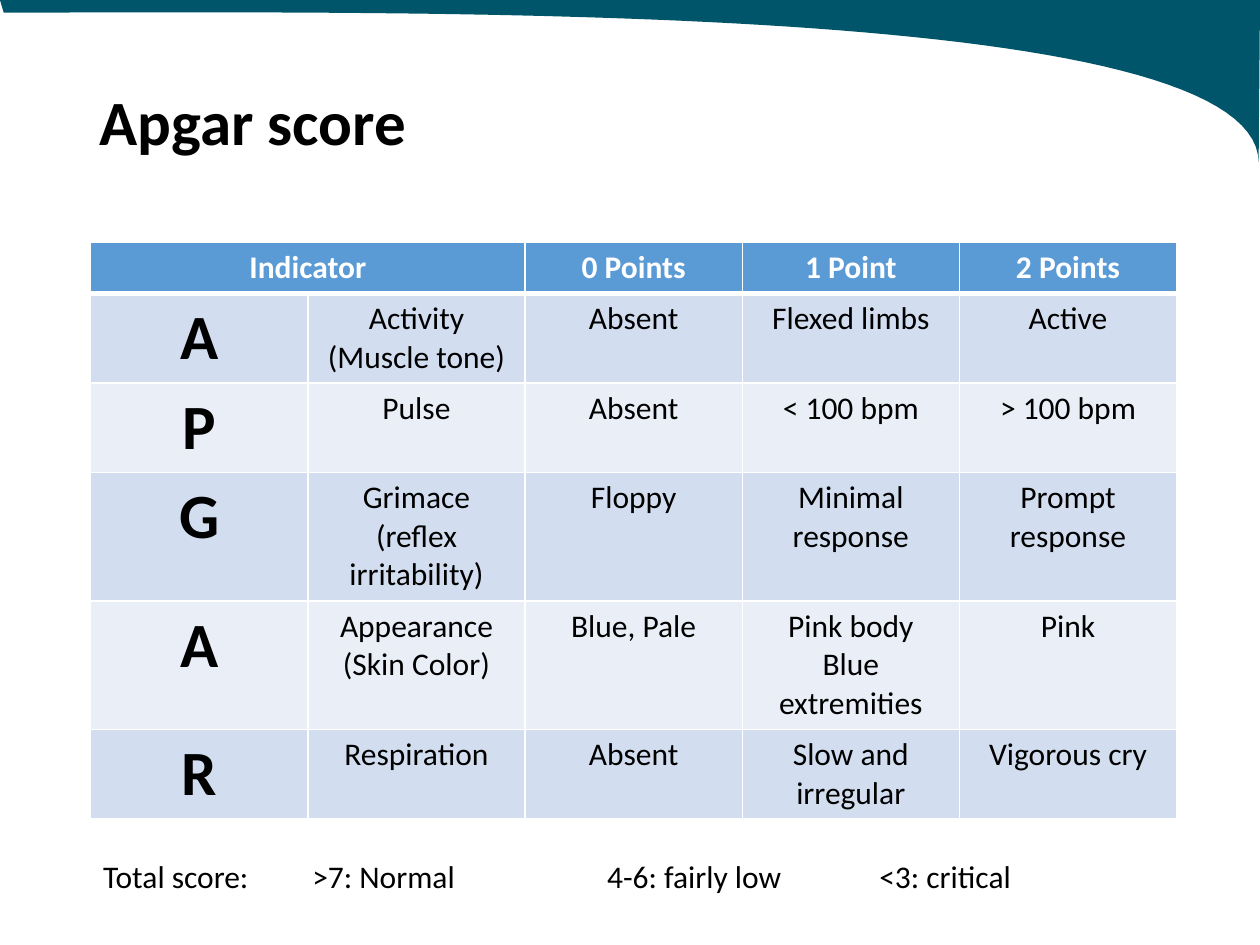
from lxml import etree
from pptx import Presentation
from pptx.dml.color import RGBColor
from pptx.enum.text import MSO_ANCHOR, PP_ALIGN
from pptx.oxml.ns import qn
from pptx.util import Inches, Pt

CENTER = PP_ALIGN.CENTER
MIDDLE = MSO_ANCHOR.MIDDLE
BLACK, WHITE, TEAL, BLUE = "000000", "FFFFFF", "00556A", "5B9BD5"
BANDS = ("D2DEEF", "EAEFF7")
BODY = {"name": "Calibri", "size": Pt(18), "bold": False}
HEADING = {**BODY, "bold": True}
LARGE = {**HEADING, "size": Pt(36)}

HEADERS = ["Indicator", "", "0 Points", "1 Point", "2 Points"]
SCORES = [
    ["A", "Activity (Muscle tone)", "Absent", "Flexed limbs", "Active"],
    ["P", "Pulse", "Absent", "< 100 bpm", "> 100 bpm"],
    ["G", "Grimace (reflex irritability)", "Floppy", "Minimal response", "Prompt response"],
    ["A", "Appearance (Skin Color)", "Blue, Pale", "Pink body\nBlue extremities", "Pink"],
    ["R", "Respiration", "Absent", "Slow and irregular", "Vigorous cry"],
]
ROW_HEIGHTS = [0.41, 0.71, 0.71, 1.02, 1.02, 0.71]
TOTALS = ["Total score:", ">7: Normal", "4-6: fairly low", "<3: critical"]
TOTAL_STOPS = [1.66, 4, 6.16]


def rgb(color):
    return RGBColor.from_string(color)


def write(para, text, style, color):
    span = para.add_run()
    span.text = text
    for name, value in style.items():
        setattr(span.font, name, value)
    span.font.color.rgb = rgb(color)


def add_text(page, box, text, style):
    frame = page.shapes.add_textbox(*map(Inches, box)).text_frame
    frame.word_wrap = True
    write(frame.paragraphs[0], text, style, BLACK)
    return frame


def curve_points(start, first, second, end, steps=60):
    """Points along a cubic Bezier curve, without its start."""
    for step in range(1, steps + 1):
        t = step / steps
        u = 1 - t
        weights = (u**3, 3 * u * u * t, 3 * u * t * t, t**3)
        yield tuple(
            sum(w * p for w, p in zip(weights, axis))
            for axis in zip(start, first, second, end)
        )


def add_swoosh(page, box):
    left, top, width, height = box
    right, tip = left + width, (left + width - 0.01, top + height)
    outline = [(right, top)]
    outline += curve_points((right, top), (right, top + 0.14), (tip[0], top + 1.15), tip)
    outline += curve_points(
        tip, (right - 0.02, top), (left + 3.36, top + 0.1), (left + 0.03, top + 0.1)
    )
    builder = page.shapes.build_freeform(Inches(left), Inches(top))
    builder.add_line_segments([(Inches(x), Inches(y)) for x, y in outline], close=True)
    shape = builder.convert_to_shape()
    shape.shadow.inherit = False
    shape.fill.solid()
    shape.fill.fore_color.rgb = rgb(TEAL)
    shape.line.fill.background()


def add_title(page, box):
    frame = add_text(page, box, "Apgar score", LARGE)
    frame.vertical_anchor = MIDDLE
    frame.paragraphs[0].line_spacing = 0.9


def set_borders(cell, top, bottom):
    properties = cell._tc.get_or_add_tcPr()
    for side, points in {"lnL": 1, "lnR": 1, "lnT": top, "lnB": bottom}.items():
        line = etree.SubElement(properties, qn(f"a:{side}"), w=str(Pt(points)))
        fill = etree.SubElement(line, qn("a:solidFill"))
        etree.SubElement(fill, qn("a:srgbClr"), val=WHITE)


def add_score_table(page, box):
    rows = [HEADERS] + SCORES
    table = page.shapes.add_table(len(rows), len(HEADERS), *map(Inches, box)).table
    for column in table.columns:
        column.width = Inches(box[2] / len(HEADERS))
    for r, (texts, height) in enumerate(zip(rows, ROW_HEIGHTS)):
        table.rows[r].height = Inches(height)
        for c, text in enumerate(texts):
            cell = table.cell(r, c)
            set_borders(cell, top=3 if r == 1 else 1, bottom=3 if r == 0 else 1)
            cell.fill.solid()
            cell.fill.fore_color.rgb = rgb(BANDS[(r - 1) % 2] if r else BLUE)
            style = HEADING if r == 0 else LARGE if c == 0 else BODY
            for i, line in enumerate(text.split("\n")):
                frame = cell.text_frame
                para = frame.add_paragraph() if i else frame.paragraphs[0]
                para.alignment = CENTER
                if line:
                    write(para, line, style, BLACK if r else WHITE)
    table.cell(0, 0).merge(table.cell(0, 1))


def add_totals(page, box):
    para = add_text(page, box, "\t".join(TOTALS), BODY).paragraphs[0]
    tabs = etree.SubElement(para._p.get_or_add_pPr(), qn("a:tabLst"))
    for stop in TOTAL_STOPS:
        etree.SubElement(tabs, qn("a:tab"), pos=str(Inches(stop)), algn="l")


def main():
    deck = Presentation()
    deck.slide_width, deck.slide_height = Inches(10), Inches(7.5)
    page = deck.slides.add_slide(deck.slide_layouts[6])
    add_swoosh(page, (0, 0, 10, 1.29))
    add_title(page, (0.69, 0.4, 8.62, 1.19))
    add_score_table(page, (0.72, 1.92, 8.62, sum(ROW_HEIGHTS)))
    add_totals(page, (0.72, 6.75, 8.62, 0.4))
    deck.save("out.pptx")


if __name__ == "__main__":
    main()
